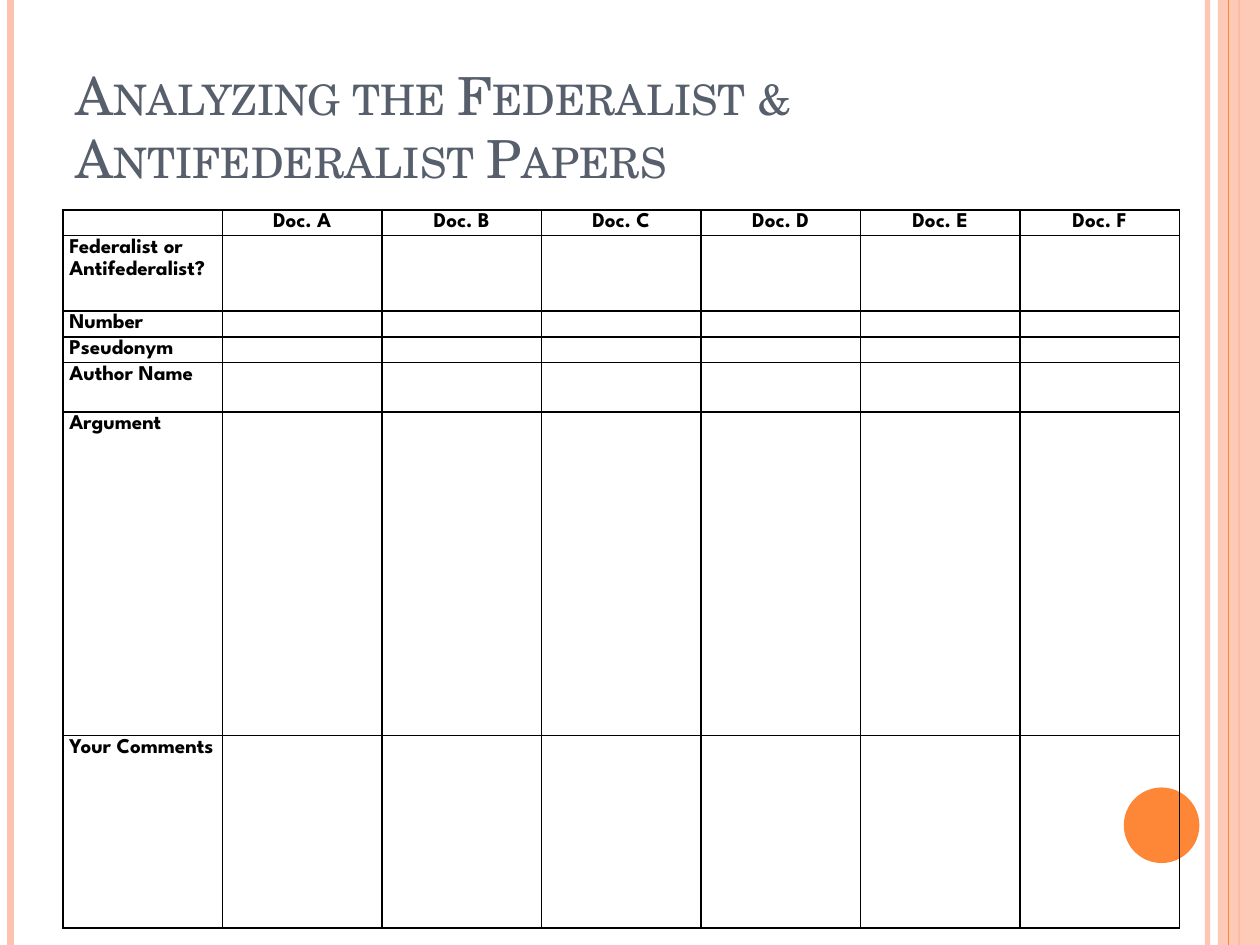
import pptx
import pptx.util
import pptx.dml.color
import pptx.enum.shapes
import pptx.enum.text
import pptx.oxml
import pptx.oxml.ns
import lxml.etree

Pt = pptx.util.Pt
RGB = pptx.dml.color.RGBColor.from_string
qn = pptx.oxml.ns.qn
SHAPE = pptx.enum.shapes.MSO_SHAPE
ALIGN = pptx.enum.text.PP_ALIGN

COLORS = {"peach": "FEC3AE", "orange": "FE8637", "slate": "575F6D", "black": "000000"}
TITLE_FONT = "TeX Gyre Schola"
TABLE_FONT = "League Spartan"

prs = pptx.Presentation()
prs.slide_width, prs.slide_height = Pt(720), Pt(540)
slide = prs.slides.add_slide(prs.slide_layouts[5])


def set_opacity(element, percent):
    color = element.find(".//" + qn("a:srgbClr"))
    lxml.etree.SubElement(color, qn("a:alpha"), val=str(percent * 1000))


def add_stripe(x, color, width, opacity=100):
    stripe = slide.shapes.add_connector(
        pptx.enum.shapes.MSO_CONNECTOR.STRAIGHT, Pt(x), Pt(0), Pt(x), Pt(540))
    stripe.line.color.rgb = RGB(COLORS[color])
    stripe.line.width = Pt(width)
    if opacity < 100:
        set_opacity(stripe.line._ln, opacity)
    lxml.etree.SubElement(stripe._element.spPr, qn("a:effectLst"))


add_stripe(690, "peach", 3, 93)
add_stripe(6, "peach", 4.5)
add_stripe(708, "orange", 1.5)

side_band = slide.shapes.add_shape(SHAPE.RECTANGLE, Pt(696), Pt(0), Pt(24), Pt(540))
add_stripe(702, "orange", 0.75)
page_dot = slide.shapes.add_shape(SHAPE.OVAL, Pt(642.2), Pt(450), Pt(43.2), Pt(43.2))
for ornament, color in ((side_band, "peach"), (page_dot, "orange")):
    ornament.shadow.inherit = False
    ornament.fill.solid()
    ornament.fill.fore_color.rgb = RGB(COLORS[color])
    ornament.line.fill.background()
set_opacity(side_band._element.spPr, 87)

heading = slide.shapes.title
heading.left, heading.top, heading.width, heading.height = Pt(36), Pt(21.6), Pt(588), Pt(90)
heading.text_frame.text = "Analyzing the Federalist & Antifederalist Papers"
heading.text_frame.vertical_anchor = pptx.enum.text.MSO_ANCHOR.BOTTOM
heading_line = heading.text_frame.paragraphs[0]
heading_line.alignment = ALIGN.LEFT
heading_line.font.name = TITLE_FONT
heading_line.font.size = Pt(30)
heading_line.font.color.rgb = RGB(COLORS["slate"])
heading_line.runs[0]._r.get_or_add_rPr().set("cap", "small")

documents = [f"Doc. {letter}" for letter in "ABCDEF"]
questions = ["Federalist or Antifederalist?", "Number", "Pseudonym",
             "Author Name", "Argument", "Your Comments"]
row_heights = [14.6, 43.2, 14.7, 14.7, 28.2, 185, 110]
column_width = 91.14

worksheet = slide.shapes.add_table(
    len(row_heights), len(documents) + 1, Pt(36), Pt(120),
    Pt(column_width * 7), Pt(sum(row_heights))).table
worksheet.first_row = worksheet.horz_banding = False
for column in worksheet.columns:
    column.width = Pt(column_width)
for row, height in zip(worksheet.rows, row_heights):
    row.height = Pt(height)
for position, document in enumerate(documents, 1):
    worksheet.cell(0, position).text = document
for position, question in enumerate(questions, 1):
    worksheet.cell(position, 0).text = question

for row_number, row in enumerate(worksheet.rows):
    for cell in row.cells:
        cell.margin_left = cell.margin_right = Pt(3.6)
        cell.margin_top = cell.margin_bottom = Pt(0)
        entry = cell.text_frame.paragraphs[0]
        entry.alignment = ALIGN.CENTER if row_number == 0 else ALIGN.LEFT
        entry.line_spacing = 1.15
        entry.font.name = TABLE_FONT
        entry.font.size = Pt(12)
        entry.font.bold = True
        entry.font.color.rgb = RGB(COLORS["black"])
        if not cell.text:
            blank = lxml.etree.SubElement(entry._p, qn("a:endParaRPr"), sz="1200", b="1")
            lxml.etree.SubElement(blank, qn("a:latin"), typeface=TABLE_FONT)
        borders = cell._tc.get_or_add_tcPr()
        for side in ("a:lnL", "a:lnR", "a:lnT", "a:lnB"):
            edge = lxml.etree.SubElement(borders, qn(side), w=str(Pt(1)))
            paint = lxml.etree.SubElement(edge, qn("a:solidFill"))
            lxml.etree.SubElement(paint, qn("a:srgbClr"), val=COLORS["black"])
        cell.fill.background()

prs.save("out.pptx")
